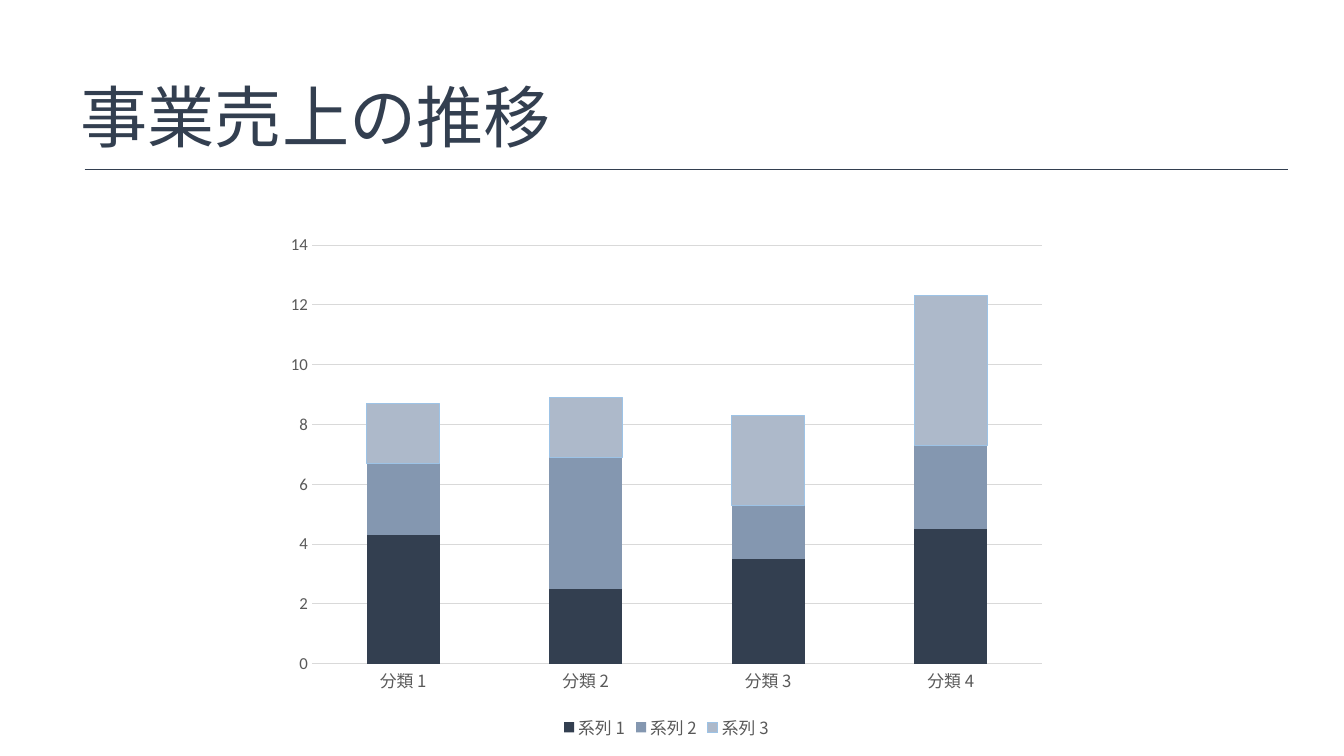
from pptx import Presentation
from pptx import util as u
from pptx.chart.data import CategoryChartData
from pptx.dml.color import RGBColor
from pptx.enum import chart as charts, shapes, text
from pptx.oxml.ns import qn
from pptx.oxml.xmlchemy import OxmlElement

NAVY = RGBColor(0x33, 0x3F, 0x50)
STEEL = RGBColor(0x84, 0x97, 0xB0)
MIST = RGBColor(0xAD, 0xB9, 0xCA)
SKY = RGBColor(0x9D, 0xC3, 0xE6)
GREY_TEXT = RGBColor(0x59, 0x59, 0x59)
GREY_LINE = RGBColor(0xD9, 0xD9, 0xD9)
JAPANESE, LATIN = "Noto Sans CJK JP", "Calibri"


def style(font, name, size, color):
    font.name, font.size, font.color.rgb = name, u.Pt(size), color


deck = Presentation()
deck.slide_width, deck.slide_height = u.Inches(13.33), u.Inches(7.5)
slide = deck.slides.add_slide(deck.slide_layouts[6])

# Title and rule
title = slide.shapes.add_textbox(u.Inches(0.7), u.Inches(0.7), u.Inches(4.91), u.Inches(0.91))
title.text_frame.word_wrap = False
title.text_frame.auto_size = text.MSO_AUTO_SIZE.SHAPE_TO_FIT_TEXT
heading = title.text_frame.paragraphs[0]
heading.text = "事業売上の推移"
style(heading.font, JAPANESE, 48, NAVY)

rule = slide.shapes.add_connector(
    shapes.MSO_CONNECTOR.STRAIGHT,
    u.Inches(0.84), u.Inches(1.68), u.Inches(12.77), u.Inches(1.68))
rule.line.color.rgb, rule.line.width = NAVY, u.Pt(0.5)
rule._element.spPr.append(OxmlElement("a:effectLst"))

# Stacked sales chart
sales = [
    ((4.3, 2.5, 3.5, 4.5), NAVY),
    ((2.4, 4.4, 1.8, 2.8), STEEL),
    ((2, 2, 3, 5), MIST),
]
data = CategoryChartData()
data.categories = [f"分類 {number}" for number in range(1, 5)]
for number, (values, _) in enumerate(sales, 1):
    data.add_series(f"系列 {number}", values)

chart = slide.shapes.add_chart(
    charts.XL_CHART_TYPE.COLUMN_STACKED,
    u.Inches(2.73), u.Inches(2.23), u.Inches(7.76), u.Inches(5.15), data).chart
chart.has_title = False
style(chart.font, LATIN, 10, RGBColor(0, 0, 0))

columns = chart.plots[0]
columns.gap_width, columns.overlap, columns.vary_by_categories = 150, 100, False
for series, (_, color) in zip(columns.series, sales):
    series.format.fill.solid()
    series.format.fill.fore_color.rgb = color
    series.format.line.fill.background()
top_edge = columns.series[-1].format.line
top_edge.color.rgb, top_edge.width = SKY, u.Pt(0.75)

categories, amounts = chart.category_axis, chart.value_axis
for axis, font_name in ((categories, JAPANESE), (amounts, LATIN)):
    axis.major_tick_mark = axis.minor_tick_mark = charts.XL_TICK_MARK.NONE
    style(axis.tick_labels.font, font_name, 12, GREY_TEXT)
amounts.format.line.fill.background()
amounts.has_major_gridlines = True
for line in (categories.format.line, amounts.major_gridlines.format.line):
    line.color.rgb, line.width = GREY_LINE, u.Pt(0.75)

chart.has_legend = True
chart.legend.position = charts.XL_LEGEND_POSITION.BOTTOM
chart.legend.include_in_layout = False
style(chart.legend.font, JAPANESE, 12, GREY_TEXT)

# Japanese glyphs take their typeface from the East Asian slot
for root in (title._element, chart._chartSpace):
    for latin in root.iter(qn("a:latin")):
        if latin.get("typeface") == JAPANESE:
            east_asian = OxmlElement("a:ea")
            east_asian.set("typeface", JAPANESE)
            latin.addnext(east_asian)

deck.save("out.pptx")
